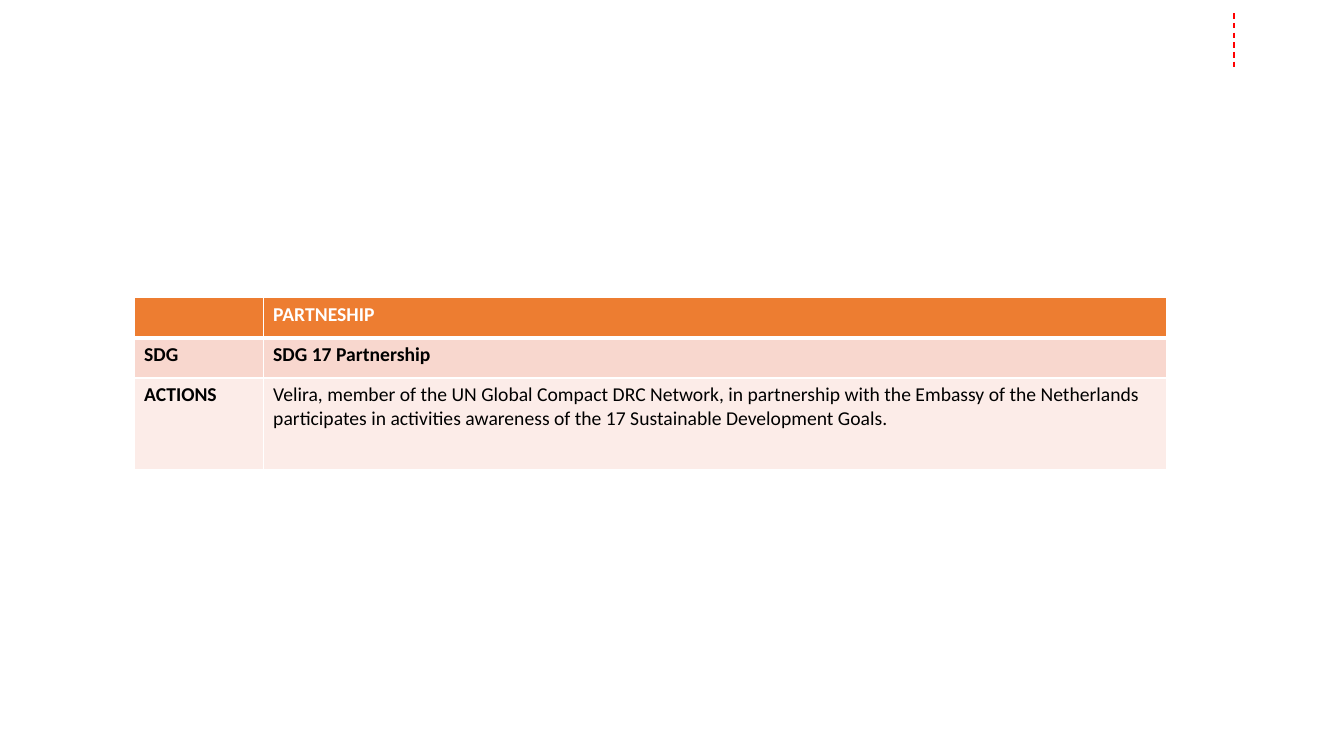
from dataclasses import dataclass

from pptx import Presentation
from pptx.dml.color import RGBColor
from pptx.enum.dml import MSO_LINE_DASH_STYLE as DashStyle
from pptx.enum.shapes import MSO_CONNECTOR as Connector
from pptx.oxml.ns import qn
from pptx.slide import Slide
from pptx.table import _Cell as Cell
from pptx.util import Inches, Pt
from lxml.etree import SubElement

COLUMN_WIDTHS = (1.28, 8.96)
BORDER_COLOR = "FFFFFF"


@dataclass(frozen=True)
class TableRow:
    label: str
    detail: str
    height: float
    fill: str
    color: str = "000000"
    detail_bold: bool = True
    top_border: float = 1
    bottom_border: float = 1


ROWS = (
    TableRow("", "PARTNESHIP", 0.4, "ED7D31", color="FFFFFF", bottom_border=3),
    TableRow("SDG", "SDG 17 Partnership", 0.4, "F8D7CE", top_border=3),
    TableRow(
        "ACTIONS",
        "Velira, member of the UN Global Compact DRC Network, in partnership with "
        "the Embassy of the Netherlands participates in activities awareness of "
        "the 17 Sustainable Development Goals.",
        0.91, "FCECE8", detail_bold=False,
    ),
)


def rgb(value: str) -> RGBColor:
    return RGBColor.from_string(value)


def set_borders(cell: Cell, row: TableRow) -> None:
    properties = cell._tc.get_or_add_tcPr()
    widths = {"lnL": 1, "lnR": 1, "lnT": row.top_border, "lnB": row.bottom_border}
    for side, width in widths.items():
        border = SubElement(properties, qn(f"a:{side}"), w=str(Pt(width)))
        fill = SubElement(border, qn("a:solidFill"))
        SubElement(fill, qn("a:srgbClr"), val=BORDER_COLOR)


def fill_cell(cell: Cell, text: str, bold: bool, row: TableRow) -> None:
    set_borders(cell, row)
    cell.fill.solid()
    cell.fill.fore_color.rgb = rgb(row.fill)
    cell.text = text
    font = cell.text_frame.paragraphs[0].font
    font_format = {"name": "Calibri", "size": Pt(14), "bold": bold}
    for name, value in font_format.items():
        setattr(font, name, value)
    font.color.rgb = rgb(row.color)


def add_partnership_table(slide: Slide) -> None:
    table = slide.shapes.add_table(
        len(ROWS), len(COLUMN_WIDTHS), Inches(1.33), Inches(2.95),
        Inches(sum(COLUMN_WIDTHS)), Inches(sum(row.height for row in ROWS)),
    ).table
    for column, width in zip(table.columns, COLUMN_WIDTHS):
        column.width = Inches(width)
    for table_row, row in zip(table.rows, ROWS):
        table_row.height = Inches(row.height)
        label_cell, detail_cell = table_row.cells
        fill_cell(label_cell, row.label, True, row)
        fill_cell(detail_cell, row.detail, row.detail_bold, row)


def add_corner_line(slide: Slide) -> None:
    connector = slide.shapes.add_connector(
        Connector.STRAIGHT, Inches(12.24), Inches(0.13), Inches(12.24), Inches(0.66)
    )
    connector.line.color.rgb = rgb("FF0000")
    line_format = {"width": Pt(1), "dash_style": DashStyle.DASH}
    for name, value in line_format.items():
        setattr(connector.line, name, value)
    SubElement(connector._element.spPr, qn("a:effectLst"))


def main() -> None:
    presentation = Presentation()
    presentation.slide_width = Inches(13.33)
    presentation.slide_height = Inches(7.5)
    slide = presentation.slides.add_slide(presentation.slide_layouts[6])
    add_corner_line(slide)
    add_partnership_table(slide)
    presentation.save("out.pptx")


if __name__ == "__main__":
    main()
